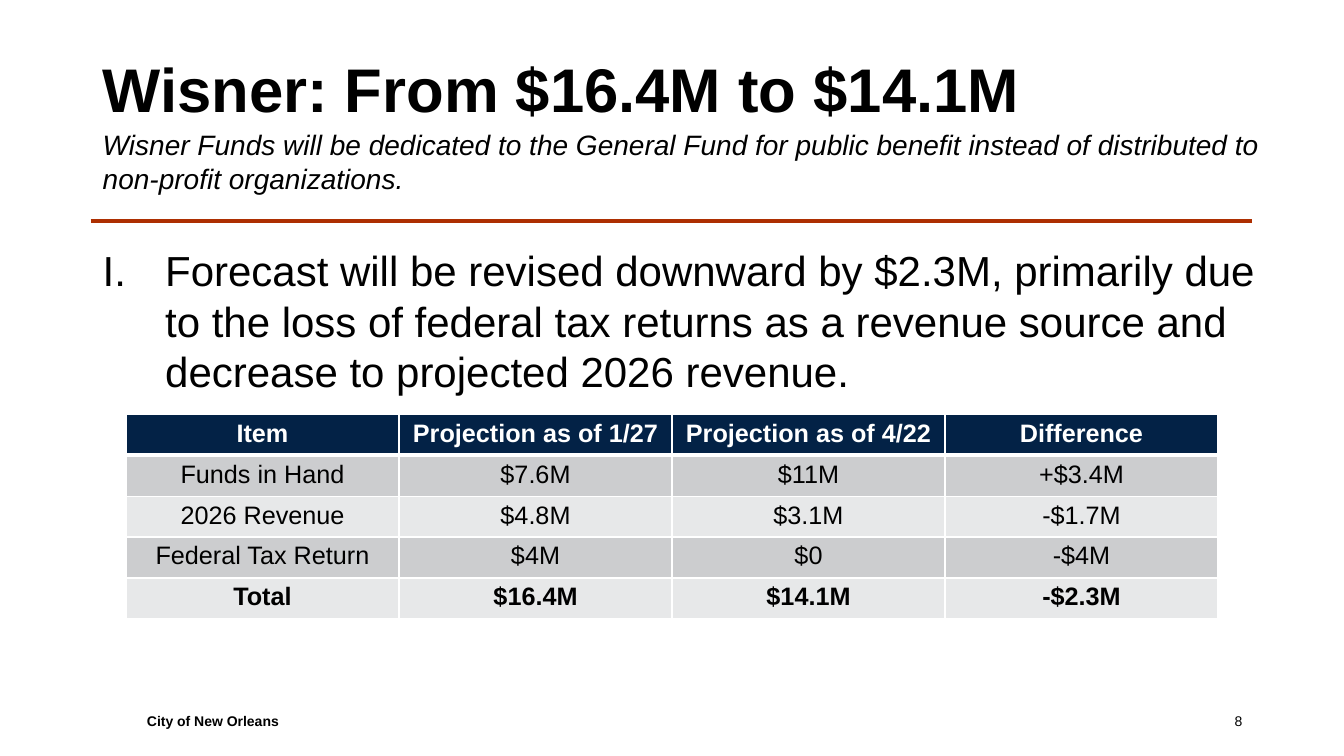
import pptx
import pptx.dml.color
import pptx.enum.shapes
import pptx.enum.text
import pptx.oxml
import pptx.oxml.ns
import pptx.util

Inches = pptx.util.Inches
Pt = pptx.util.Pt
RGBColor = pptx.dml.color.RGBColor
ALIGN = pptx.enum.text.PP_ALIGN
ANCHOR = pptx.enum.text.MSO_ANCHOR

BLACK = RGBColor(0x00, 0x00, 0x00)
WHITE = RGBColor(0xFF, 0xFF, 0xFF)
NAVY = RGBColor(0x03, 0x22, 0x46)
RUST = RGBColor(0xAD, 0x2F, 0x01)
BANDS = (RGBColor(0xCC, 0xCD, 0xCF), RGBColor(0xE7, 0xE8, 0xE9))

PROJECTIONS = (
    ("Item", "Projection as of 1/27", "Projection as of 4/22", "Difference"),
    ("Funds in Hand", "$7.6M", "$11M", "+$3.4M"),
    ("2026 Revenue", "$4.8M", "$3.1M", "-$1.7M"),
    ("Federal Tax Return", "$4M", "$0", "-$4M"),
    ("Total", "$16.4M", "$14.1M", "-$2.3M"),
)


def add_run(paragraph, text, size, color=BLACK, bold=False, italic=False):
    """Add one Arial run to a paragraph."""
    run = paragraph.add_run()
    run.text = text
    run.font.name = "Arial"
    run.font.size = Pt(size)
    run.font.color.rgb = color
    run.font.bold = bold
    run.font.italic = italic


def add_text(slide, box, text, size, anchor=ANCHOR.TOP, align=ALIGN.LEFT, **style):
    """Add a wrapping text box and return its paragraph."""
    shape = slide.shapes.add_textbox(*map(Inches, box))
    shape.text_frame.word_wrap = True
    shape.text_frame.vertical_anchor = anchor
    paragraph = shape.text_frame.paragraphs[0]
    paragraph.alignment = align
    add_run(paragraph, text, size, **style)
    return paragraph


def number_roman(paragraph, indent):
    """Give a paragraph a hanging roman numeral."""
    properties = paragraph._p.get_or_add_pPr()
    properties.set("marL", str(Inches(indent)))
    properties.set("indent", str(-Inches(indent)))
    numbering = pptx.oxml.parse_xml(
        f'<a:buAutoNum {pptx.oxml.ns.nsdecls("a")} type="romanUcPeriod"/>')
    properties.append(numbering)


def add_rule(slide, left, right, top):
    """Add the horizontal rule below the heading."""
    rule = slide.shapes.add_connector(
        pptx.enum.shapes.MSO_CONNECTOR.STRAIGHT,
        Inches(left), Inches(top), Inches(right), Inches(top))
    rule.line.color.rgb = RUST
    rule.line.width = Pt(2.75)
    rule._element.spPr.append(
        pptx.oxml.parse_xml(f'<a:effectLst {pptx.oxml.ns.nsdecls("a")}/>'))


def set_borders(cell, widths):
    """Draw white cell borders with a width in points for each side."""
    for side, width in widths.items():
        cell._tc.get_or_add_tcPr().append(pptx.oxml.parse_xml(
            f'<a:ln{side} {pptx.oxml.ns.nsdecls("a")} w="{Pt(width)}">'
            f'<a:solidFill><a:srgbClr val="{WHITE}"/></a:solidFill></a:ln{side}>'))


def add_projection_table(slide, box, rows):
    """Add the table with a navy header, grey bands and a bold total."""
    table = slide.shapes.add_table(
        len(rows), len(rows[0]), *map(Inches, box)).table
    last = len(rows) - 1
    for row_index, row in enumerate(rows):
        header = row_index == 0
        for column_index, text in enumerate(row):
            cell = table.cell(row_index, column_index)
            set_borders(cell, {"L": 1, "R": 1, "T": 3 if row_index == 1 else 1,
                               "B": 3 if header else 1})
            cell.fill.solid()
            cell.fill.fore_color.rgb = NAVY if header else BANDS[(row_index - 1) % 2]
            paragraph = cell.text_frame.paragraphs[0]
            paragraph.alignment = ALIGN.CENTER
            add_run(paragraph, text, 18, WHITE if header else BLACK,
                    bold=row_index in (0, last))


def main():
    """Build the Wisner slide and save it."""
    presentation = pptx.Presentation()
    presentation.slide_width = Inches(13.33)
    presentation.slide_height = Inches(7.5)
    slide = presentation.slides.add_slide(presentation.slide_layouts[6])

    add_text(slide, (1.36, 6.95, 7.56, 0.4), "City of New Orleans", 10,
             ANCHOR.MIDDLE, bold=True)
    add_text(slide, (9.42, 6.95, 3, 0.4), "8", 10, ANCHOR.MIDDLE, ALIGN.RIGHT)
    add_rule(slide, 0.9, 12.42, 2.19)
    add_text(slide, (0.92, 0.4, 11.5, 0.94), "Wisner: From $16.4M to $14.1M", 44,
             ANCHOR.MIDDLE, bold=True)
    forecast = add_text(
        slide, (0.92, 2.38, 11.66, 2.27),
        "Forecast will be revised downward by $2.3M, primarily due to the loss of "
        "federal tax returns as a revenue source and decrease to projected 2026 "
        "revenue.", 30)
    number_roman(forecast, 0.62)
    add_text(slide, (0.92, 1.22, 12.11, 0.77),
             "Wisner Funds will be dedicated to the General Fund for public benefit "
             "instead of distributed to non-profit organizations.", 20, italic=True)
    add_projection_table(slide, (1.25, 4.11, 10.83, 2.03), PROJECTIONS)
    presentation.save("out.pptx")


if __name__ == "__main__":
    main()
